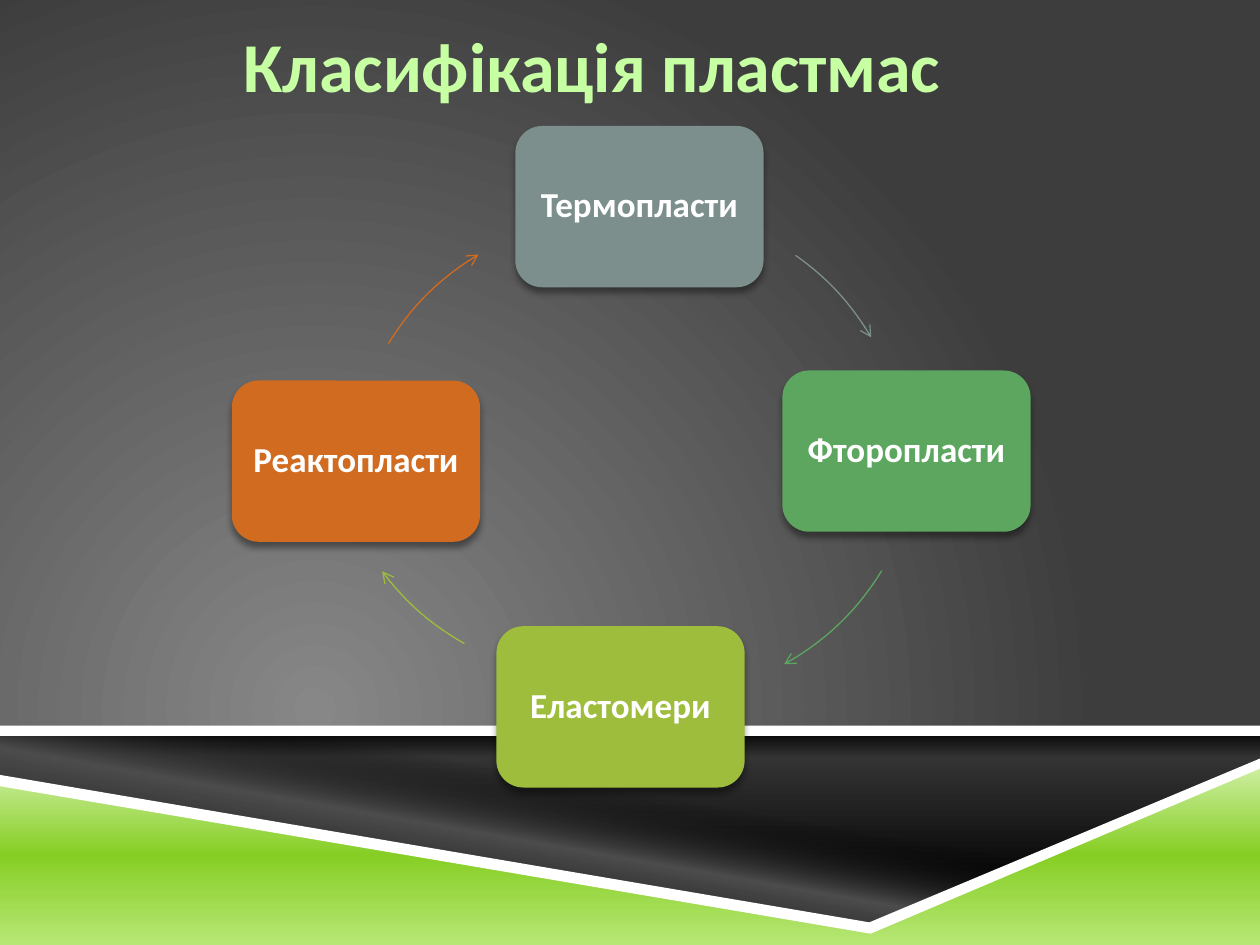
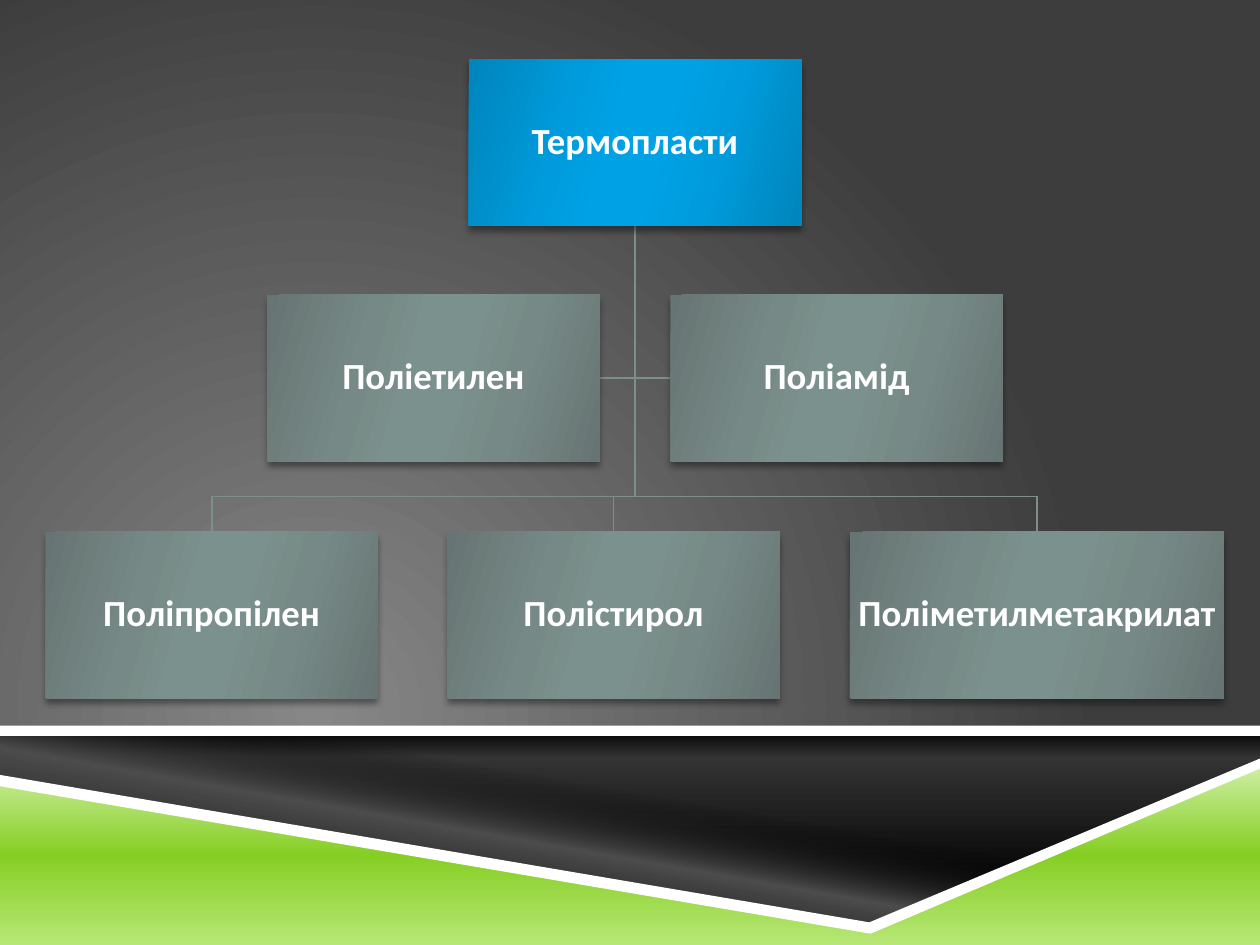
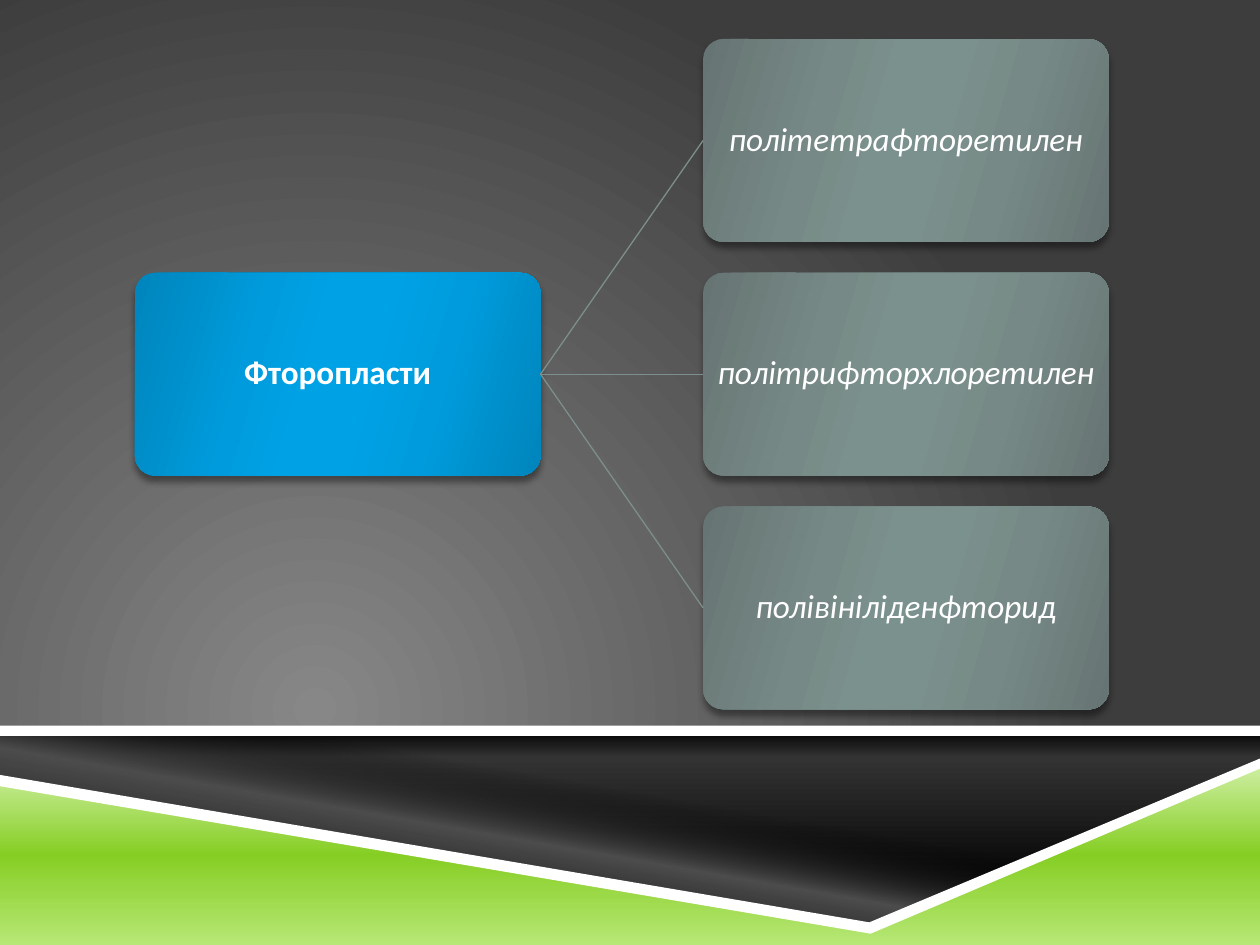
from lxml.etree import SubElement
from pptx import Presentation
from pptx.dml.color import RGBColor
from pptx.enum.shapes import MSO_CONNECTOR, MSO_SHAPE
from pptx.enum.text import MSO_ANCHOR, MSO_AUTO_SIZE, PP_ALIGN
from pptx.oxml.ns import qn
from pptx.util import Inches, Pt

HUES = {
    "white": "FFFFFF", "black": "000000", "title": "C7FFA3",
    "slate": "7D8F8C", "green": "5CA65F", "lime": "9FBD3D", "rust": "D06B20",
}
FADES = {
    "room": [(0, "878787"), (100, "3D3D3D")],
    "grass": [(0, "CFEFA4"), (50, "86CE24"), (100, "B7E776")],
    "night": [(0, "000000"), (14, "333333"), (83, "000000")],
    "gleam": [(41, "000000", 0), (57, "4D4D4D"), (100, "000000", 0)],
    "blue": [(0, "0085BC"), (30, "009BDC"), (45, "00A2E6"),
             (55, "00A2E6"), (73, "009BDC"), (100, "0085BC")],
    "steel": [(0, "667573"), (30, "778986"), (45, "7B918D"),
              (55, "7B918D"), (73, "778986"), (100, "667573")],
}
COLS, ROWS = 100, 75


def add(host, tag, **attrs):
    return SubElement(host, qn(tag), {k: str(v) for k, v in attrs.items()})


def tint(host, hue, alpha=100):
    node = add(host, "a:srgbClr", val=hue)
    if alpha < 100:
        add(node, "a:alpha", val=alpha * 1000)


def fade(host, name, angle=None):
    node = add(host, "a:gradFill", rotWithShape=1)
    stops = add(node, "a:gsLst")
    for place, *hue in FADES[name]:
        tint(add(stops, "a:gs", pos=place * 1000), *hue)
    if angle is None:
        ring = add(node, "a:path", path="circle")
        add(ring, "a:fillToRect", l=50000, t=100000, r=100000, b=50000)
    else:
        add(node, "a:lin", ang=angle * 60000, scaled=0)
    host.replace(host.find(qn("a:noFill")), node)


def write(frame, text, size=20, hue="white", bold=False, italic=False,
          align=PP_ALIGN.CENTER, anchor=MSO_ANCHOR.MIDDLE, pad=(0.01, 0.01), space=0.9):
    frame.word_wrap = True
    frame.auto_size = MSO_AUTO_SIZE.NONE
    frame.vertical_anchor = anchor
    frame.margin_left = frame.margin_right = Inches(pad[0])
    frame.margin_top = frame.margin_bottom = Inches(pad[1])
    para = frame.paragraphs[0]
    para.alignment = align
    para.line_spacing = space
    run = para.add_run()
    run.text = text
    font = run.font
    font.name, font.size = "Calibri", Pt(size)
    font.bold, font.italic = bold, italic
    font.color.rgb = RGBColor.from_string(HUES[hue])


class Deck:
    def __init__(self):
        self.file = Presentation()
        self.file.slide_width, self.file.slide_height = Inches(10), Inches(7.5)
        self.col = self.file.slide_width / COLS
        self.row = self.file.slide_height / ROWS
        self.slide = None

    def spot(self, x, y):
        return round(x * self.col), round(y * self.row)

    def page(self, layout):
        self.slide = self.file.slides.add_slide(self.file.slide_layouts[layout])

    def paint(self, shape, fill, angle):
        shape.shadow.inherit = False
        shape.line.fill.background()
        if fill in FADES:
            shape.fill.background()
            fade(shape.element.spPr, fill, angle)
        else:
            shape.fill.solid()
            shape.fill.fore_color.rgb = RGBColor.from_string(HUES[fill])
        return shape

    def stroke(self, shape, hue, width):
        shape.line.color.rgb = RGBColor.from_string(HUES[hue])
        shape.line.width = Pt(width)

    def area(self, dots, fill, angle=90):
        first, *rest = [self.spot(*dot) for dot in dots]
        pen = self.slide.shapes.build_freeform(*first, scale=1.0)
        pen.add_line_segments(rest, close=True)
        return self.paint(pen.convert_to_shape(), fill, angle)

    def block(self, kind, x, y, w, h, fill, angle=16):
        shape = self.slide.shapes.add_shape(kind, *self.spot(x, y), *self.spot(w, h))
        return self.paint(shape, fill, angle)

    def card(self, text, x, y, w, h, fill, kind=MSO_SHAPE.ROUNDED_RECTANGLE,
             curve=None, **style):
        shape = self.block(kind, x, y, w, h, fill)
        if curve:
            shape.adjustments[0] = curve
        glow = add(shape.element.spPr.find(qn("a:effectLst")), "a:outerShdw",
                   blurRad=Pt(4), dist=Pt(3.3), dir=5400000, rotWithShape=0)
        tint(glow, HUES["black"], 40)
        write(shape.text_frame, text, **style)
        return shape

    def line(self, x, y, to_x, to_y, width=1):
        link = self.slide.shapes.add_connector(
            MSO_CONNECTOR.STRAIGHT, *self.spot(x, y), *self.spot(to_x, to_y))
        self.stroke(link, "slate", width)
        add(link.element.spPr, "a:effectLst")
        return link

    def join(self, left, right):
        link = self.line(0, 0, 1, 1, width=0.75)
        link.begin_connect(left, 3)
        link.end_connect(right, 1)

    def arc(self, x, y, size, start, end, hue):
        shape = self.slide.shapes.add_shape(
            MSO_SHAPE.ARC, *self.spot(x, y), *self.spot(size, size))
        shape.adjustments[0], shape.adjustments[1] = start * 0.6, end * 0.6
        shape.shadow.inherit = False
        shape.fill.background()
        self.stroke(shape, hue, 0.75)
        add(shape.element.spPr.find(qn("a:ln")), "a:tailEnd", type="arrow")

    def title(self, text, x, y, w, h):
        shape = self.slide.shapes.title
        shape.left, shape.top = self.spot(x, y)
        shape.width, shape.height = self.spot(w, h)
        write(shape.text_frame, text, size=40, hue="title", bold=True, pad=(0, 0.05),
              align=PP_ALIGN.LEFT, anchor=MSO_ANCHOR.TOP, space=1.0)

    def theme(self):
        master = self.file.slide_master
        master.background.fill.background()
        fade(next(master.element.iter(qn("p:bgPr"))), "room")
        floor = [(0, 58), (100, 57.9), (100, 60.7), (68.9, 73.7), (0, 61.9)]
        parts = [
            self.area([(0, 62.1), (69.2, 73.8), (100, 60.7), (100, 75), (0, 75)], "grass"),
            self.area(floor, "night"),
            self.area(floor, "gleam", 100),
            self.block(MSO_SHAPE.RECTANGLE, 0, 57.6, 100, 0.8, "white"),
            self.area([(0, 61.5), (69, 73.2), (100, 60.2), (100, 61),
                       (69.1, 74.1), (0, 62.4)], "white"),
        ]
        for rank, part in enumerate(parts):
            part.element.nvSpPr.cNvPr.set("id", str(100 + rank))
            master.shapes.element.insert(2 + rank, part.element)


def cycle(deck):
    deck.title("Класифікація пластмас", 19.3, 1.3, 72.4, 15)
    ring = [
        ("Термопласти", 40.9, 10, "slate", (29.8, 16.4, 42.3, 305.2, 329.4)),
        ("Фторопласти", 62.1, 29.4, "green", (30.8, 13.1, 42.3, 31.5, 60.9)),
        ("Еластомери", 39.4, 49.7, "lime", (26.1, 11.5, 42.3, 119.4, 143.1)),
        ("Реактопласти", 18.4, 30.2, "rust", (27.7, 17.2, 42.3, 211.6, 239.1)),
    ]
    for text, x, y, hue, bend in ring:
        deck.card(text, x, y, 19.7, 12.8, hue, bold=True)
        deck.arc(*bend, hue)


def tree(deck):
    wide, tall, mid, bus = 26.4, 13.2, 50.4, 39.4
    tops = [4.7, 23.4, 42.2]
    drops = [16.8, 48.7, 82.3]
    deck.line(mid, tops[0] + tall, mid, bus)
    deck.line(47.6, 30, 53.2, 30)
    deck.line(drops[0], bus, drops[-1], bus)
    for x in drops:
        deck.line(x, bus, x, tops[2])
    cards = [
        ("Термопласти", mid, 0, wide, "blue"),
        ("Поліпропілен", drops[0], 2, wide, "steel"),
        ("Полістирол", drops[1], 2, wide, "steel"),
        ("Поліметилметакрилат", drops[2], 2, 29.7, "steel"),
        ("Поліетилен", 34.4, 1, wide, "steel"),
        ("Поліамід", 66.4, 1, wide, "steel"),
    ]
    for text, x, level, w, fill in cards:
        deck.card(text, x - w / 2, tops[level], w, tall, fill,
                  kind=MSO_SHAPE.RECTANGLE, size=21, bold=True)


def fan(deck):
    wide, tall, top, step = 32.2, 16.1, 3.1, 18.55
    root = deck.card("Фторопласти", 10.7, top + step, wide, tall, "blue",
                     curve=0.1, size=19, bold=True)
    leaves = ["політетрафторетилен", "політрифторхлоретилен", "полівініліденфторид"]
    for rank, text in enumerate(leaves):
        leaf = deck.card(text, 55.8, top + rank * step, wide, tall, "steel",
                         curve=0.1, size=19, italic=True)
        deck.join(root, leaf)


def main():
    deck = Deck()
    deck.page(5)
    deck.theme()
    cycle(deck)
    for draw in (tree, fan):
        deck.page(6)
        draw(deck)
    deck.file.save("out.pptx")


if __name__ == "__main__":
    main()
